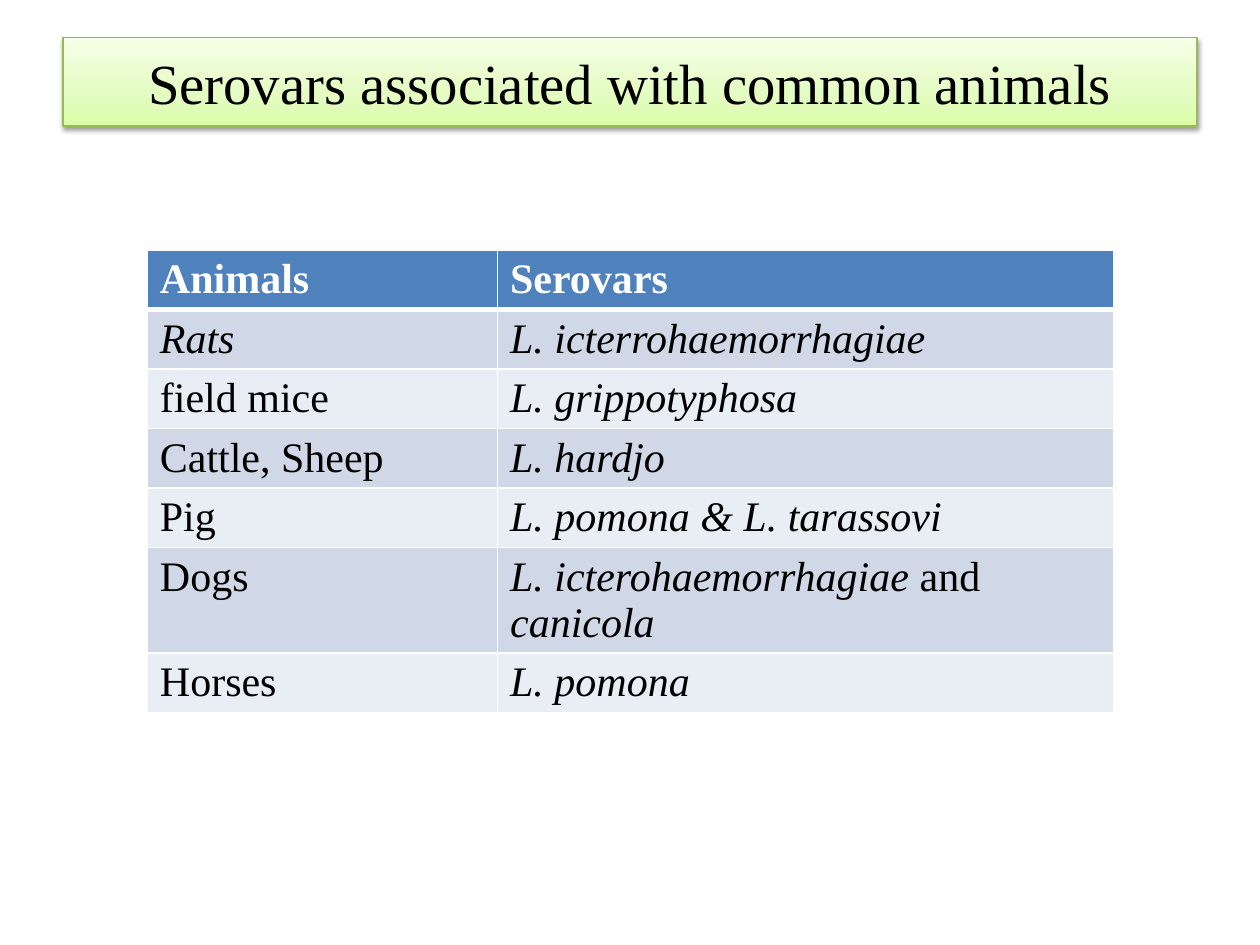
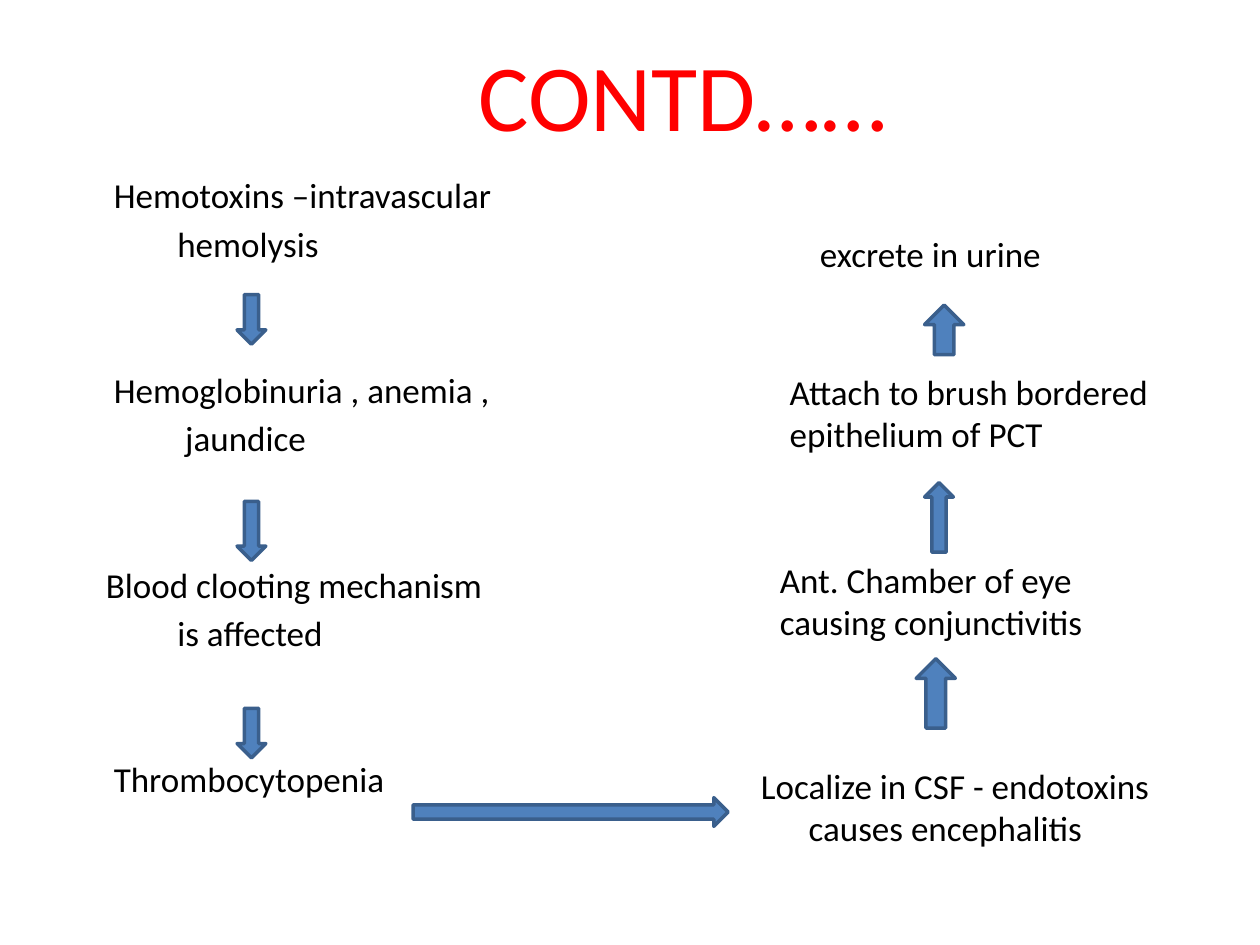
from lxml import etree
from pptx import Presentation
from pptx.dml.color import RGBColor
from pptx.enum import shapes, text
from pptx.oxml import ns
from pptx.util import Cm, Pt

COLORS = {
    "black": "000000", "white": "FFFFFF", "red": "FF0000",
    "blue": "4F81BD", "outline": "3A5F8C",
    "odd_row": "D0D8E8", "even_row": "E9EDF4",
    "green_line": "98B955",
}
BANNER_STOPS = [(0, "DAFDA7"), (35, "E4FCC2"), (100, "F5FFE7")]
SERIF, SANS = "Times New Roman", "Calibri"
FLOW_SIZE = 20
SPACE = 0.16  # width in cm of one space at FLOW_SIZE

# Text between asterisks is italic.
SEROVARS = [
    ("Animals", "Serovars"),
    ("*Rats*", "*L. icterrohaemorrhagiae*"),
    ("field mice", "*L. grippotyphosa*"),
    ("Cattle, Sheep", "*L. hardjo*"),
    ("Pig", "*L. pomona & L. tarassovi*"),
    ("Dogs", "*L. icterohaemorrhagiae *and *canicola*"),
    ("Horses", "*L. pomona*"),
]
# Each step: lines with their indent in spaces.
BLOOD_STEPS = [
    [("Hemotoxins –intravascular", 4), ("hemolysis", 12)],
    [("Hemoglobinuria , anemia ,", 4), ("jaundice", 13)],
    [("Blood clooting mechanism", 3), ("is affected", 12)],
    [("Thrombocytopenia", 4)],
]
# Each step: lines with their indent in spaces, then left, top, width, height.
ORGAN_STEPS = [
    ([("Localize in CSF - endotoxins", 0), ("causes encephalitis", 6)],
     0, 10.72, 9.32, 2.82),
    ([("Ant. Chamber of eye causing conjunctivitis", 0)], 0.38, 6.56, 7.26, 1.96),
    ([("Attach to brush bordered epithelium of PCT", 0)], 0.58, 2.77, 8.74, 1.96),
    ([("excrete in urine", 0)], 1.19, 0, 5.56, 1.12),
]
ORGAN_ARROWS = [(3.38, 8.71, 0.79, 1.4), (3.55, 5.16, 0.58, 1.4),
                (3.55, 1.58, 0.79, 1)]


def rgb(name):
    return RGBColor.from_string(COLORS[name])


def sub(parent, tag, **attributes):
    return etree.SubElement(parent, ns.qn(tag), {k: str(v) for k, v in attributes.items()})


def place(shape, left, top, width, height):
    shape.left, shape.top = Cm(left), Cm(top)
    shape.width, shape.height = Cm(width), Cm(height)


def style_runs(para, font, size, color):
    for span in para.runs:
        span.font.name, span.font.size = font, Pt(size)
        span.font.color.rgb = rgb(color)


def add_title(slide, wording, box, font, size, color):
    title = slide.shapes.title
    place(title, *box)
    frame = title.text_frame
    frame.text = wording
    frame.auto_size = text.MSO_AUTO_SIZE.NONE
    frame.vertical_anchor = text.MSO_ANCHOR.MIDDLE
    frame.paragraphs[0].alignment = text.PP_ALIGN.CENTER
    style_runs(frame.paragraphs[0], font, size, color)
    return title


def make_banner(title):
    """Give a title a green gradient, a border and a soft shadow."""
    title.fill.gradient()
    title.fill.gradient_angle = 90
    properties = title.element.spPr
    stops = properties.find(".//" + ns.qn("a:gsLst"))
    for stop in list(stops):
        stops.remove(stop)
    for percent, color in BANNER_STOPS:
        sub(sub(stops, "a:gs", pos=percent * 1000), "a:srgbClr", val=color)
    title.line.color.rgb = rgb("green_line")
    title.line.width = Pt(0.75)
    shadow = sub(sub(properties, "a:effectLst"), "a:outerShdw", blurRad=Pt(3.1),
                 dist=Pt(1.6), dir=5400000, rotWithShape=0)
    sub(sub(shadow, "a:srgbClr", val=COLORS["black"]), "a:alpha", val=38000)


def set_borders(cell, top, bottom):
    properties = cell._tc.get_or_add_tcPr()
    widths = {"a:lnL": 1, "a:lnR": 1, "a:lnT": top, "a:lnB": bottom}
    for position, (tag, width) in enumerate(widths.items()):
        line = sub(properties, tag, w=Pt(width))
        sub(sub(line, "a:solidFill"), "a:srgbClr", val=COLORS["white"])
        properties.insert(position, line)


def fill_cell(cell, wording, row):
    header = row == 0
    para = cell.text_frame.paragraphs[0]
    for index, part in enumerate(wording.split("*")):
        if part:
            span = para.add_run()
            span.text = part
            span.font.italic = index % 2 == 1
            span.font.bold = header
    style_runs(para, SERIF, 24, "white" if header else "black")
    cell.fill.solid()
    cell.fill.fore_color.rgb = rgb(
        "blue" if header else "odd_row" if row % 2 else "even_row")
    set_borders(cell, top=3 if row == 1 else 1, bottom=3 if header else 1)


def add_serovar_table(slide, left, top):
    widths, row_height = (7.06, 12.42), 1.2
    table = slide.shapes.add_table(
        len(SEROVARS), len(widths), Cm(left), Cm(top),
        Cm(sum(widths)), Cm(row_height * len(SEROVARS))).table
    for column, width in zip(table.columns, widths):
        column.width = Cm(width)
    for row, wordings in enumerate(SEROVARS):
        table.rows[row].height = Cm(2.08 if wordings[0] == "Dogs" else row_height)
        for column, wording in enumerate(wordings):
            fill_cell(table.cell(row, column), wording, row)


def add_arrow(slide, kind, left, top, width, height):
    arrow = slide.shapes.add_shape(kind, Cm(left), Cm(top), Cm(width), Cm(height))
    arrow.shadow.inherit = False
    arrow.fill.solid()
    arrow.fill.fore_color.rgb = rgb("blue")
    arrow.line.color.rgb = rgb("outline")
    arrow.line.width = Pt(2)


def write_lines(frame, lines):
    """Write (wording, indent in spaces) pairs as paragraphs."""
    frame.text = "\n".join(wording for wording, _ in lines)
    for para, (_, spaces) in zip(frame.paragraphs, lines):
        properties = para._p.get_or_add_pPr()
        properties.set("marL", str(Cm(spaces * SPACE)))
        properties.set("indent", "0")
        sub(properties, "a:buNone")
        style_runs(para, SANS, FLOW_SIZE, "black")


def add_blood_chain(slide, left, top, width, height):
    body = slide.placeholders[1]
    place(body, left, top, width, height)
    frame = body.text_frame
    frame.auto_size = text.MSO_AUTO_SIZE.NONE
    write_lines(frame, [line for step in BLOOD_STEPS for line in step])
    for index, para in enumerate(frame.paragraphs):
        starts_step = index % 2 == 0
        para.space_before = Pt(0 if index == 0 else 59.6 if starts_step else 3.6)
    for index, length in enumerate((1, 1.19, 1)):
        add_arrow(slide, shapes.MSO_SHAPE.DOWN_ARROW,
                  left + 3.38, top + 2.56 + index * 4.17, 0.58, length)


def add_organ_chain(slide, left, top):
    for lines, x, y, width, height in ORGAN_STEPS:
        box = slide.shapes.add_textbox(Cm(left + x), Cm(top + y), Cm(width), Cm(height))
        box.text_frame.word_wrap = True
        write_lines(box.text_frame, lines)
    for x, y, width, height in ORGAN_ARROWS:
        add_arrow(slide, shapes.MSO_SHAPE.UP_ARROW, left + x, top + y, width, height)


def build_serovar_slide(deck):
    slide = deck.slides.add_slide(deck.slide_layouts[5])
    make_banner(add_title(slide, "Serovars associated with common animals",
                          (1.27, 0.76, 22.86, 1.78), SERIF, 32.4, "black"))
    add_serovar_table(slide, 2.97, 5.04)


def build_flow_slide(deck):
    slide = deck.slides.add_slide(deck.slide_layouts[1])
    add_title(slide, "CONTD……", (3.18, 0, 21.16, 3.76), SANS, 54, "red")
    add_blood_chain(slide, 1.4, 3.38, 22.86, 13.49)
    add_organ_chain(slide, 15.09, 4.57)
    add_arrow(slide, shapes.MSO_SHAPE.RIGHT_ARROW, 8.33, 16.08, 6.35, 0.58)


def main():
    deck = Presentation()
    deck.slide_width, deck.slide_height = Cm(25.4), Cm(19.05)
    build_serovar_slide(deck)
    build_flow_slide(deck)
    deck.save("out.pptx")


if __name__ == "__main__":
    main()
